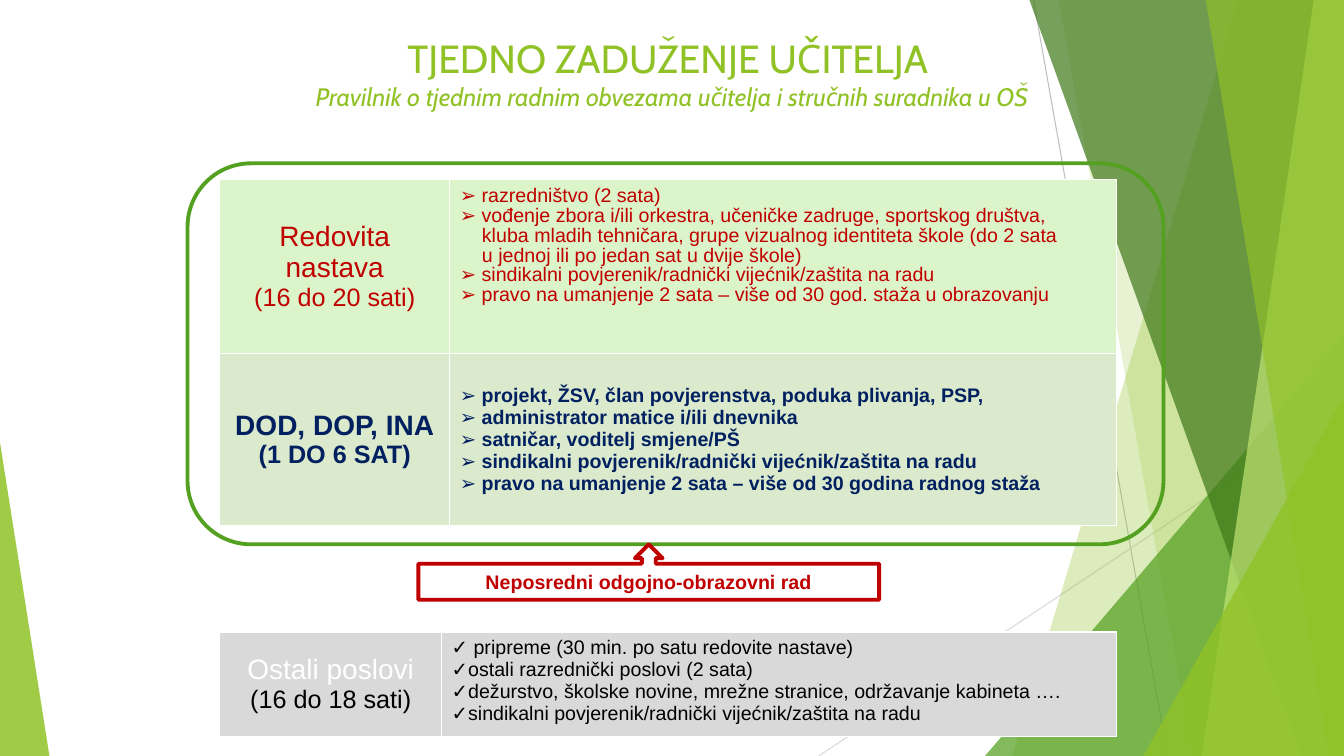
import pptx
import pptx.util
import pptx.dml.color
import pptx.enum.shapes
import pptx.enum.text
import pptx.oxml
import pptx.oxml.ns
import lxml.etree

Inches = pptx.util.Inches
Pt = pptx.util.Pt
RGBColor = pptx.dml.color.RGBColor
MSO_SHAPE = pptx.enum.shapes.MSO_SHAPE
ANCHOR = pptx.enum.text.MSO_ANCHOR
CENTER = pptx.enum.text.PP_ALIGN.CENTER
qn = pptx.oxml.ns.qn

W, H = 13.33, 7.5
WHITE = RGBColor(0xFF, 0xFF, 0xFF)
BLACK = RGBColor(0, 0, 0)
LIME = RGBColor(0x90, 0xC2, 0x26)
PALE_LIME = RGBColor(0xC0, 0xE4, 0x74)
GREEN = RGBColor(0x54, 0xA0, 0x21)
DARK_GREEN = RGBColor(0x3F, 0x78, 0x19)
MINT = RGBColor(0xDB, 0xF4, 0xCA)
SAGE = RGBColor(0xDB, 0xE9, 0xCD)
GREY = RGBColor(0xD9, 0xD9, 0xD9)
MID_GREY = RGBColor(0xBF, 0xBF, 0xBF)
RED = RGBColor(0xC0, 0, 0)
NAVY = RGBColor(0, 0x20, 0x60)

REGULAR = [
    ("➢", " razredništvo (2 sata)"),
    ("➢", " vođenje zbora i/ili orkestra, učeničke zadruge, sportskog društva,"),
    (None, "kluba mladih tehničara, grupe vizualnog identiteta škole (do 2 sata"),
    (None, "u jednoj ili po jedan sat u dvije škole)"),
    ("➢", " sindikalni povjerenik/radnički vijećnik/zaštita na radu"),
    ("➢", " pravo na umanjenje 2 sata – više od 30 god. staža u obrazovanju"),
]
EXTRA = [
    ("➢", " projekt, ŽSV, član povjerenstva, poduka plivanja, PSP,"),
    ("➢", " administrator matice i/ili dnevnika"),
    ("➢", " satničar, voditelj smjene/PŠ"),
    ("➢", " sindikalni povjerenik/radnički vijećnik/zaštita na radu"),
    ("➢", " pravo na umanjenje 2 sata – više od 30 godina radnog staža"),
]
OTHER = [
    ("✓", " pripreme (30 min. po satu redovite nastave)"),
    ("✓", "ostali razrednički poslovi (2 sata)"),
    ("✓", "dežurstvo, školske novine, mrežne stranice, održavanje kabineta …."),
    ("✓", "sindikalni povjerenik/radnički vijećnik/zaštita na radu"),
]


def add_line(s, x1, y1, x2, y2, color):
    line = s.shapes.add_connector(
        pptx.enum.shapes.MSO_CONNECTOR.STRAIGHT,
        Inches(x1), Inches(y1), Inches(x2), Inches(y2))
    line.line.color.rgb = color
    line.line.width = Pt(0.75)
    lxml.etree.SubElement(line._element.spPr, qn("a:effectLst"))


def fill_glass(sp, color, opacity):
    sp.shadow.inherit = False
    sp.fill.solid()
    sp.fill.fore_color.rgb = color
    sp.line.fill.background()
    clr = sp._element.spPr.find(qn("a:solidFill"))[0]
    lxml.etree.SubElement(clr, qn("a:alpha"), val=str(opacity * 1000))


def add_shard(s, top_x, bottom_x, color, opacity):
    fb = s.shapes.build_freeform(Inches(top_x), 0)
    corners = [(W, 0), (W, H), (bottom_x, H)]
    fb.add_line_segments([(Inches(x), Inches(y)) for x, y in corners])
    fill_glass(fb.convert_to_shape(), color, opacity)


def add_triangle(s, x, y, w, apex, color, opacity):
    sp = s.shapes.add_shape(MSO_SHAPE.ISOSCELES_TRIANGLE, Inches(x), Inches(y),
                            Inches(w), Inches(H - y))
    sp.adjustments[0] = apex
    fill_glass(sp, color, opacity)


def add_outline(s, kind, x, y, w, h, color):
    sp = s.shapes.add_shape(kind, Inches(x), Inches(y), Inches(w), Inches(h))
    sp.shadow.inherit = False
    sp.fill.background()
    sp.line.color.rgb = color
    sp.line.width = Pt(2.75)
    return sp


def write(p, text, size, color, font="Arial", bold=False, italic=False):
    p.text = text
    f = p.runs[0].font
    f.name, f.size, f.bold, f.italic = font, Pt(size), bold, italic
    f.color.rgb = color


def set_bullet(p, char):
    pPr = p._p.get_or_add_pPr()
    pPr.set("marL", str(Inches(0.16 if char else 0.22)))
    pPr.set("indent", str(Inches(-0.16 if char else 0)))
    if char:
        lxml.etree.SubElement(pPr, qn("a:buFont"), typeface="Arial")
        lxml.etree.SubElement(pPr, qn("a:buChar"), char=char)
    else:
        lxml.etree.SubElement(pPr, qn("a:buNone"))


def style_cell(cell, fill, anchor):
    cell.vertical_anchor = anchor
    tcPr = cell._tc.get_or_add_tcPr()
    for side in ("lnL", "lnR", "lnT", "lnB"):
        ln = lxml.etree.SubElement(tcPr, qn("a:" + side), w=str(Pt(1)))
        solid = lxml.etree.SubElement(ln, qn("a:solidFill"))
        lxml.etree.SubElement(solid, qn("a:srgbClr"), val=str(WHITE))
    cell.fill.solid()
    cell.fill.fore_color.rgb = fill


def paragraphs(tf, count):
    return [tf.paragraphs[0]] + [tf.add_paragraph() for _ in range(count - 1)]


def fill_row(table, row, heading, hours, colors, items, fill, anchor, bold, spacing):
    head, body = table.cell(row, 0), table.cell(row, 1)
    style_cell(head, fill, ANCHOR.MIDDLE)
    style_cell(body, fill, anchor)
    lines = zip(paragraphs(head.text_frame, 2), (heading, hours), (20, 18), colors)
    for p, text, size, color in lines:
        write(p, text, size, color, bold=bold)
        p.alignment = CENTER
    for i, (p, (char, text)) in enumerate(zip(paragraphs(body.text_frame, len(items)), items)):
        write(p, text, 14, colors[1], bold=bold)
        p.line_spacing = spacing if i else 1.0
        set_bullet(p, char)


def add_duties(s, y, widths, heights):
    table = s.shapes.add_table(len(heights), 2, Inches(2.18), Inches(y),
                               Inches(sum(widths)), Inches(sum(heights))).table
    table.first_row = table.horz_banding = False
    for col, w in zip(table.columns, widths):
        col.width = Inches(w)
    for row, h in zip(table.rows, heights):
        row.height = Inches(h)
    return table


def add_title(s):
    tf = s.shapes.add_textbox(Inches(1.86), Inches(0.29), Inches(9.61), Inches(1.35)).text_frame
    tf.word_wrap = True
    title, subtitle = paragraphs(tf, 2)
    write(title, "TJEDNO ZADUŽENJE UČITELJA ", 28, LIME, "Cabin")
    write(subtitle, "Pravilnik o tjednim radnim obvezama učitelja i stručnih suradnika u OŠ",
          18, LIME, "Cabin", italic=True)
    title.alignment = subtitle.alignment = CENTER


def add_background(s):
    add_line(s, 10.25, 0, 11.58, H, MID_GREY)
    add_line(s, W, 4.03, 8.12, H, GREY)
    add_shard(s, 12.28, 10.04, LIME, 30)
    add_shard(s, 10.5, 11.83, LIME, 20)
    add_triangle(s, 9.77, 3.33, 3.56, 1, GREEN, 72)
    add_shard(s, 10.21, 12.91, DARK_GREEN, 70)
    add_shard(s, 13.03, 11.92, PALE_LIME, 70)
    add_shard(s, 11.96, 13.18, LIME, 65)
    add_triangle(s, 11.34, 3.93, 1.99, 1, LIME, 80)
    add_triangle(s, 0, 4.39, 0.49, 0, LIME, 85)


def main():
    prs = pptx.Presentation()
    prs.slide_width, prs.slide_height = Inches(W), Inches(H)
    s = prs.slides.add_slide(prs.slide_layouts[6])
    add_background(s)
    add_title(s)
    teaching = add_duties(s, 1.78, (2.28, 6.61), (1.73, 1.7))
    fill_row(teaching, 0, "Redovita nastava", "(16 do 20 sati)", (RED, RED),
             REGULAR, MINT, ANCHOR.TOP, False, 0.9)
    fill_row(teaching, 1, "DOD, DOP, INA", "(1 DO 6 SAT)", (NAVY, NAVY),
             EXTRA, SAGE, ANCHOR.MIDDLE, True, 1.0)
    other = add_duties(s, 6.27, (2.2, 6.69), (1.03,))
    fill_row(other, 0, "Ostali poslovi", "(16 do 18 sati)", (WHITE, BLACK),
             OTHER, GREY, ANCHOR.TOP, False, 1.0)
    add_outline(s, MSO_SHAPE.ROUNDED_RECTANGLE, 1.86, 1.62, 9.68, 3.78, GREEN)
    callout = add_outline(s, MSO_SHAPE.UP_ARROW_CALLOUT, 4.15, 5.4, 4.57, 0.55, RED)
    callout.fill.solid()
    callout.fill.fore_color.rgb = WHITE
    p = callout.text_frame.paragraphs[0]
    write(p, "Neposredni odgojno-obrazovni rad", 14, RED, bold=True)
    p.alignment = CENTER
    prs.save("out.pptx")


if __name__ == "__main__":
    main()
